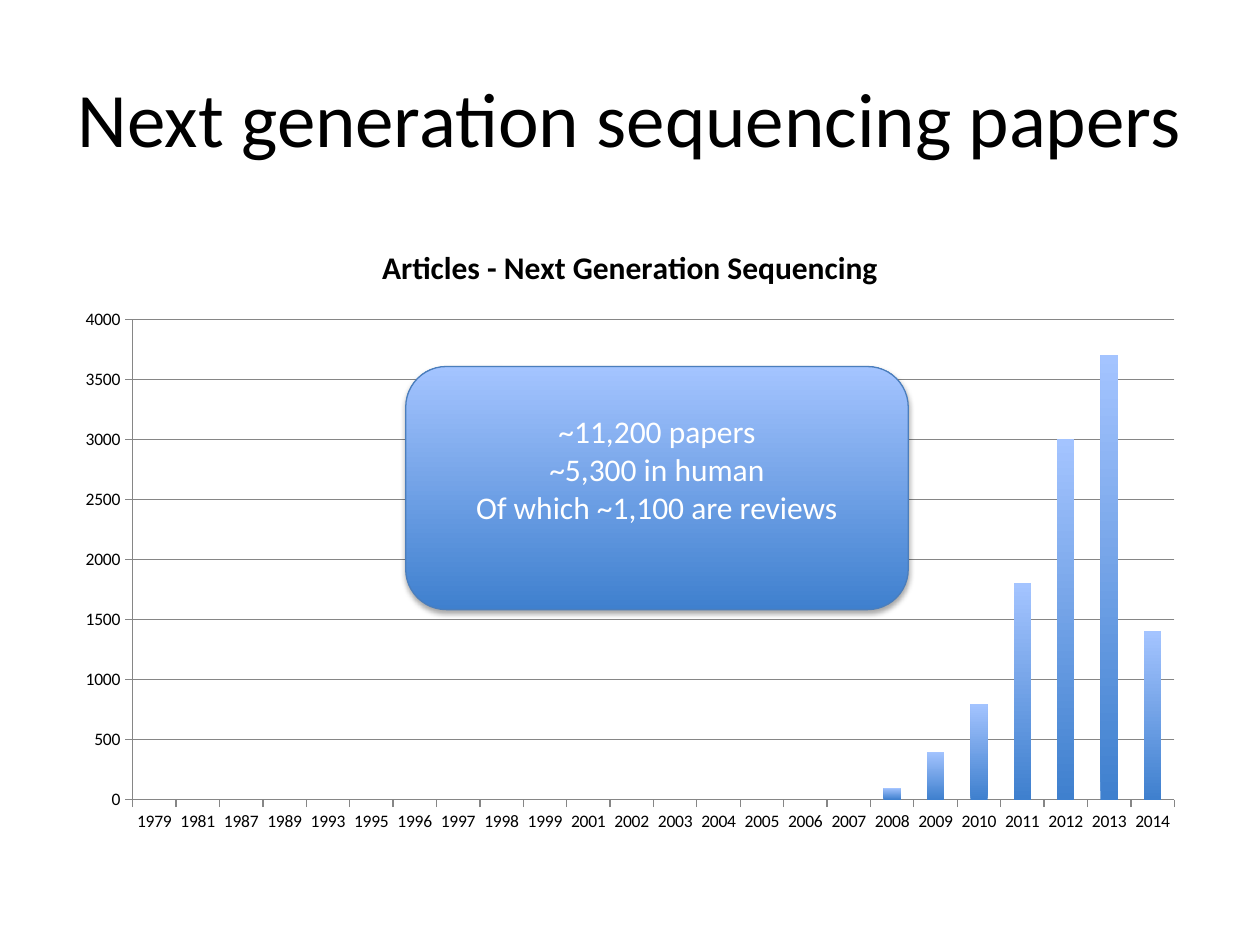
from typing import NamedTuple

from lxml import etree
from pptx import Presentation
from pptx import util as u
from pptx.chart.data import CategoryChartData
from pptx.dml.color import RGBColor
from pptx.dml.fill import FillFormat
from pptx.enum import chart as ch, shapes, text
from pptx.oxml.ns import qn
from pptx.text.text import Font

BLACK = RGBColor(0x00, 0x00, 0x00)
WHITE = RGBColor(0xFF, 0xFF, 0xFF)
AXIS_GREY = RGBColor(0x86, 0x86, 0x86)
DEEP_BLUE = RGBColor(0x3F, 0x80, 0xCE)
PALE_BLUE = RGBColor(0xA4, 0xC4, 0xFF)
EDGE_BLUE = RGBColor(0x4B, 0x7E, 0xBC)

FONT = "Calibri"
CHART_TITLE = "Articles - Next Generation Sequencing"
YEARS = [1979, 1981, 1987, 1989, 1993, *range(1995, 2000), *range(2001, 2015)]
RECENT_COUNTS = [100, 400, 800, 1800, 3000, 3700, 1400]  # 2008 to 2014
COUNTS = [0] * (len(YEARS) - len(RECENT_COUNTS)) + RECENT_COUNTS
SUMMARY = ["~11,200 papers", "~5,300 in human", "Of which ~1,100 are reviews"]


class Frame(NamedTuple):
    left: u.Length
    top: u.Length
    width: u.Length
    height: u.Length


TITLE_FRAME = Frame(u.Cm(1.27), u.Cm(0.76), u.Cm(22.86), u.Cm(3.18))
CHART_FRAME = Frame(u.Cm(1.27), u.Cm(4.45), u.Cm(22.86), u.Cm(12.57))
SUMMARY_FRAME = Frame(u.Cm(8.18), u.Cm(7.39), u.Cm(10.13), u.Cm(4.9))


def style_font(font: Font, size: float, color: RGBColor, bold: bool = False) -> None:
    font.name, font.size, font.bold = FONT, u.Pt(size), bold
    font.color.rgb = color


def fill_blue_gradient(fill: FillFormat) -> None:
    """Fade from deep blue at the bottom to pale blue at the top."""
    fill.gradient()
    fill.gradient_angle = 90
    for stop, color, position in zip(fill.gradient_stops, (DEEP_BLUE, PALE_BLUE), (0, 1)):
        stop.color.rgb = color
        stop.position = position


def add_soft_shadow(shape) -> None:
    shape.shadow.inherit = False
    effects = shape._element.spPr.find(qn("a:effectLst"))
    shadow = etree.SubElement(effects, qn("a:outerShdw"), blurRad=str(u.Pt(3.1)),
                              dist=str(u.Pt(1.8)), dir="5400000", rotWithShape="0")
    color = etree.SubElement(shadow, qn("a:srgbClr"), val=str(BLACK))
    etree.SubElement(color, qn("a:alpha"), val="35000")


def add_title(slide) -> None:
    title = slide.shapes.title
    title.left, title.top, title.width, title.height = TITLE_FRAME
    title.text_frame.text = "Next generation sequencing papers"
    title.text_frame.vertical_anchor = text.MSO_ANCHOR.MIDDLE
    para = title.text_frame.paragraphs[0]
    para.alignment = text.PP_ALIGN.CENTER
    style_font(para.runs[0].font, 44, BLACK)


def add_paper_chart(slide) -> None:
    data = CategoryChartData()
    data.categories = [str(year) for year in YEARS]
    data.add_series(CHART_TITLE, COUNTS)
    chart = slide.shapes.add_chart(ch.XL_CHART_TYPE.COLUMN_CLUSTERED, *CHART_FRAME, data).chart
    style_font(chart.font, 10, BLACK)
    chart.has_legend = False

    chart.has_title = True
    chart.chart_title.include_in_layout = False
    chart.chart_title.text_frame.text = CHART_TITLE
    style_font(chart.chart_title.text_frame.paragraphs[0].runs[0].font, 18, BLACK, bold=True)

    values = chart.value_axis
    values.minimum_scale, values.maximum_scale, values.major_unit = 0, 4000, 500
    values.has_major_gridlines = True
    for axis in (chart.category_axis, values):
        axis.major_tick_mark = ch.XL_TICK_MARK.OUTSIDE
        axis.minor_tick_mark = ch.XL_TICK_MARK.NONE
        style_font(axis.tick_labels.font, 10, BLACK)
    for line in (chart.category_axis.format.line, values.format.line,
                 values.major_gridlines.format.line):
        line.color.rgb = AXIS_GREY
        line.width = u.Pt(0.75)

    plot = chart.plots[0]
    plot.gap_width = 150
    plot.vary_by_categories = False
    plot.series[0].invert_if_negative = False
    fill_blue_gradient(plot.series[0].format.fill)


def add_summary(slide) -> None:
    box = slide.shapes.add_shape(shapes.MSO_SHAPE.ROUNDED_RECTANGLE, *SUMMARY_FRAME)
    fill_blue_gradient(box.fill)
    box.line.color.rgb = EDGE_BLUE
    box.line.width = u.Pt(0.75)
    add_soft_shadow(box)
    frame = box.text_frame
    frame.word_wrap = True
    frame.vertical_anchor = text.MSO_ANCHOR.MIDDLE
    frame.margin_bottom = u.Cm(0.9)  # lifts the lines above the middle
    frame.text = "\n".join(SUMMARY)
    for para in frame.paragraphs:
        para.alignment = text.PP_ALIGN.CENTER
        style_font(para.runs[0].font, 18, WHITE)


def main() -> None:
    deck = Presentation()
    deck.slide_width, deck.slide_height = u.Cm(25.4), u.Cm(19.05)
    slide = deck.slides.add_slide(deck.slide_layouts.get_by_name("Title Only"))
    add_title(slide)
    add_paper_chart(slide)
    add_summary(slide)
    deck.save("out.pptx")


if __name__ == "__main__":
    main()
